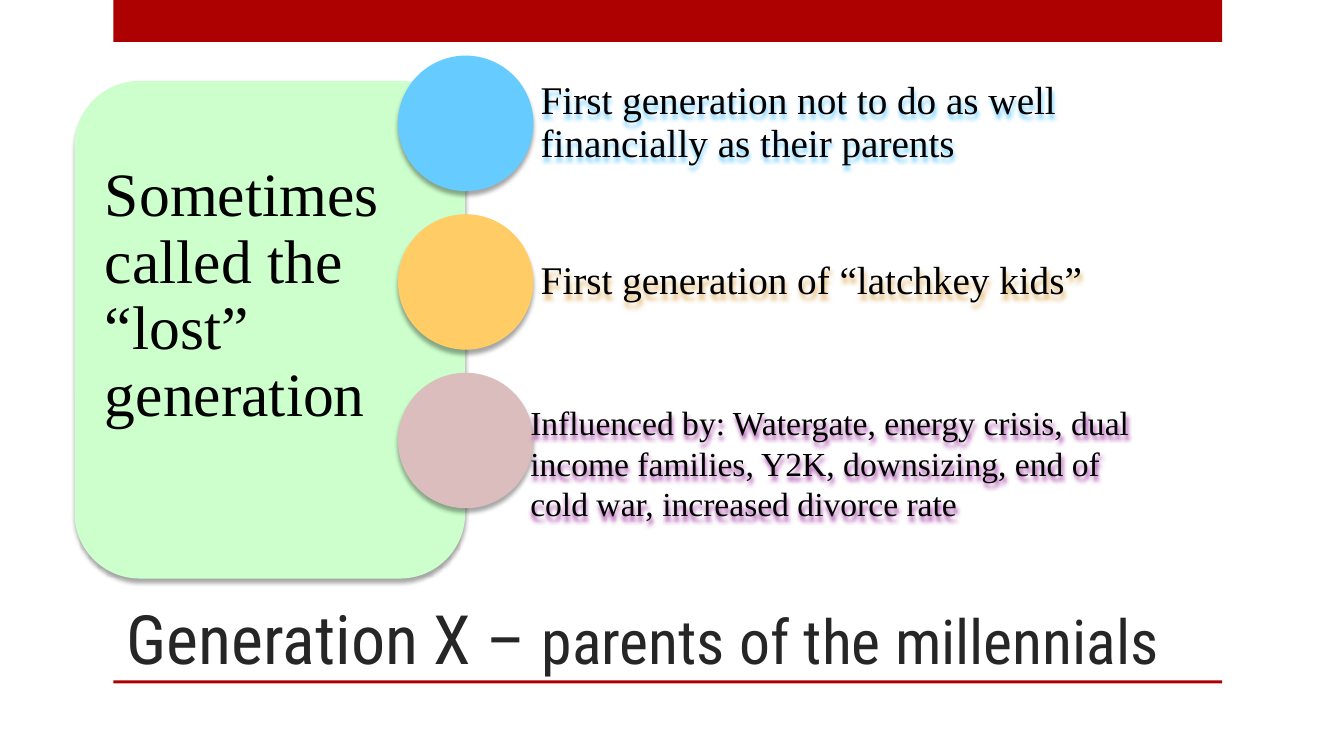
"""Builds the Generation X slide with its panel, three circles and statements."""
from dataclasses import dataclass

import lxml.etree
import pptx
import pptx.dml.color
import pptx.enum.shapes
import pptx.enum.text
import pptx.oxml.ns
import pptx.util

SHAPES = pptx.enum.shapes.MSO_SHAPE
ANCHOR = pptx.enum.text.MSO_ANCHOR
EMU_PER_PX = 9525


@dataclass(frozen=True)
class Theme:
    accent: str = "AD0101"
    heading: str = "262626"
    ink: str = "000000"
    panel: str = "CCFFCC"
    blue: str = "66CCFF"
    amber: str = "FFCC66"
    rose: str = "DBBDBD"
    amber_glow: str = "E0B060"
    purple_glow: str = "A030A0"
    heading_font: str = "Roboto Condensed"
    body_font: str = "Times New Roman"
    heading_size: float = 48.6
    subheading_size: float = 44.1
    panel_size: int = 44
    statement_size: int = 28
    influence_size: int = 24


def px(length):
    return pptx.util.Emu(length * EMU_PER_PX)


def apply(target, values):
    for name, value in values.items():
        setattr(target, name, value)


class SlideBuilder:
    def __init__(self, slide, theme):
        self.slide = slide
        self.theme = theme

    def style_font(self, font, face, size, color):
        apply(font, {"name": face, "size": pptx.util.Pt(size)})
        font.color.rgb = pptx.dml.color.RGBColor.from_string(color)

    def cast_shadow(self, shape, color, opacity):
        qn = pptx.oxml.ns.qn
        effects = shape._element.spPr.find(qn("a:effectLst"))
        shadow = lxml.etree.SubElement(
            effects, qn("a:outerShdw"), blurRad="38100", dist="38100",
            dir="5400000", rotWithShape="0")
        tint = lxml.etree.SubElement(shadow, qn("a:srgbClr"), val=color)
        lxml.etree.SubElement(tint, qn("a:alpha"), val=str(opacity * 1000))

    def shape(self, kind, box, color, shadowed=False):
        shape = self.slide.shapes.add_shape(kind, *map(px, box))
        shape.fill.solid()
        shape.fill.fore_color.rgb = pptx.dml.color.RGBColor.from_string(color)
        shape.line.fill.background()
        shape.shadow.inherit = False
        if shadowed:
            self.cast_shadow(shape, self.theme.ink, 35)

    def text(self, box, wording, size, anchor, insets=(10, 5), spacing=0.9, glow=None):
        holder = self.slide.shapes.add_textbox(*map(px, box))
        side, edge = map(px, insets)
        apply(holder.text_frame, {
            "word_wrap": True, "vertical_anchor": anchor,
            "margin_left": side, "margin_right": side,
            "margin_top": edge, "margin_bottom": edge})
        paragraph = holder.text_frame.paragraphs[0]
        paragraph.line_spacing = spacing
        run = paragraph.add_run()
        run.text = wording
        self.style_font(run.font, self.theme.body_font, size, self.theme.ink)
        if glow:
            holder.shadow.inherit = False
            self.cast_shadow(holder, glow, 90)

    def title(self, box, parts):
        heading = self.slide.shapes.title
        apply(heading, dict(zip(("left", "top", "width", "height"), map(px, box))))
        apply(heading.text_frame, {
            "word_wrap": True, "vertical_anchor": ANCHOR.BOTTOM,
            "auto_size": pptx.enum.text.MSO_AUTO_SIZE.NONE, "margin_bottom": px(2)})
        paragraph = heading.text_frame.paragraphs[0]
        paragraph.alignment = pptx.enum.text.PP_ALIGN.LEFT
        for wording, size in parts:
            run = paragraph.add_run()
            run.text = wording
            self.style_font(run.font, self.theme.heading_font, size, self.theme.heading)


def main():
    deck = pptx.Presentation()
    apply(deck, {"slide_width": px(1280), "slide_height": px(720)})
    theme = Theme()
    builder = SlideBuilder(deck.slides.add_slide(deck.slide_layouts[5]), theme)

    for top, height in ((0, 40), (648, 3)):
        builder.shape(SHAPES.RECTANGLE, (108, top, 1056, height), theme.accent)
    builder.title((111, 480, 1048, 168), (
        ("Generation X – ", theme.heading_size),
        ("parents of the millennials", theme.subheading_size)))

    builder.shape(SHAPES.ROUNDED_RECTANGLE, (71, 77, 372, 474), theme.panel, True)
    builder.text((88, 136, 287, 285), "Sometimes called the “lost” generation",
                 theme.panel_size, ANCHOR.BOTTOM, (12, 12))

    first_top, pitch, diameter = 53, 151, 129
    for index, color in enumerate((theme.blue, theme.amber, theme.rose)):
        circle = (379, first_top + index * pitch, diameter, diameter)
        builder.shape(SHAPES.OVAL, circle, color, True)

    statements = (
        ("First generation not to do as well financially as their parents", 519, theme.blue),
        ("First generation of “latchkey kids”", 691, theme.amber_glow))
    for index, (wording, width, glow) in enumerate(statements):
        builder.text((507, first_top + index * pitch, width, diameter), wording,
                     theme.statement_size, ANCHOR.MIDDLE, (8, 4), glow=glow)
    builder.text(
        (495, 378, 605, 126),
        "Influenced by: Watergate, energy crisis, dual income families, Y2K, "
        "downsizing, end of cold war, increased divorce rate",
        theme.influence_size, ANCHOR.TOP, spacing=1.0, glow=theme.purple_glow)

    deck.save("out.pptx")


if __name__ == "__main__":
    main()
